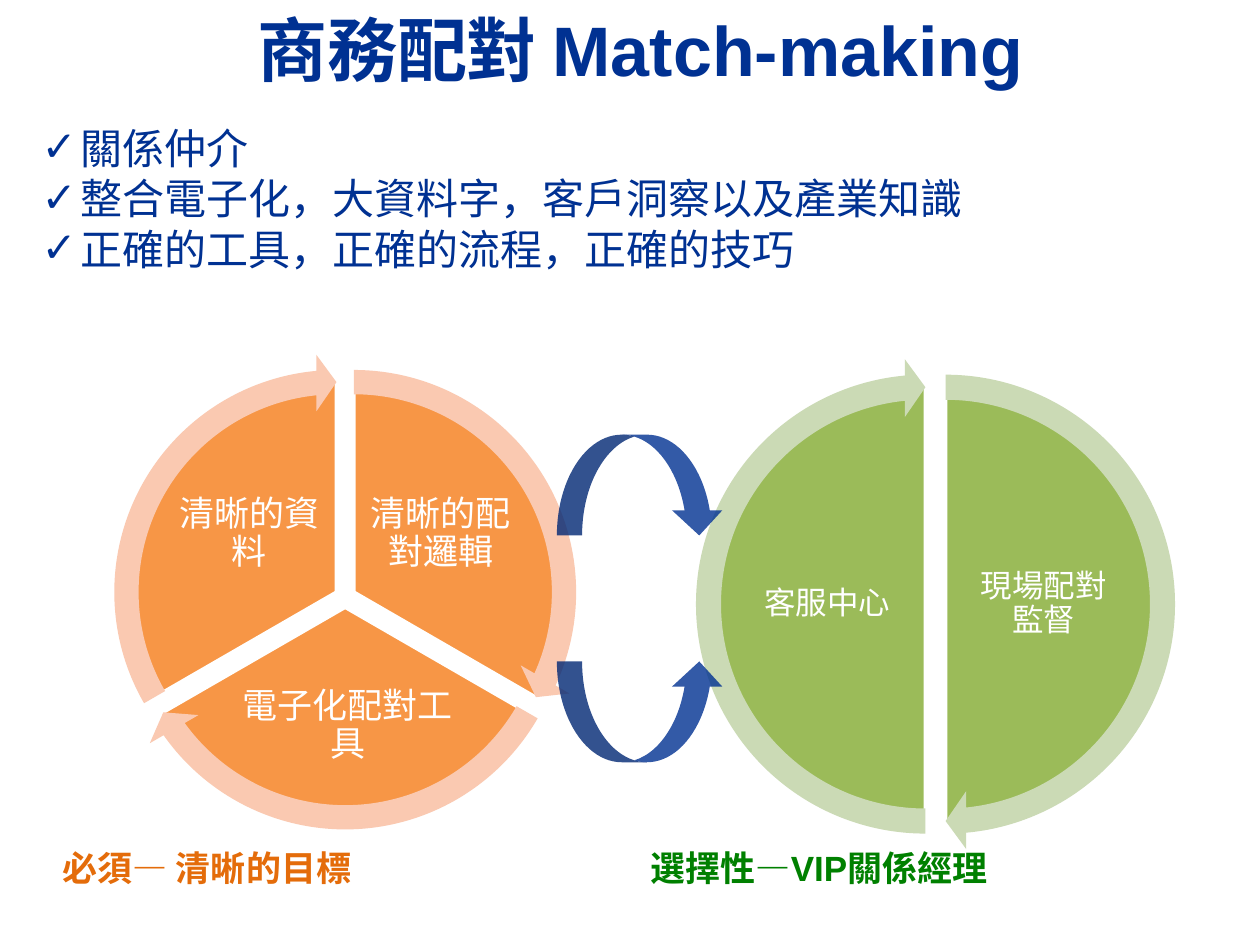
from math import cos, radians, sin

from lxml import etree
from pptx import Presentation
from pptx.dml.color import RGBColor
from pptx.enum.shapes import MSO_SHAPE
from pptx.enum.text import MSO_ANCHOR, PP_ALIGN
from pptx.oxml.ns import qn
from pptx.util import Inches, Pt

PIE, ARC = MSO_SHAPE.PIE, MSO_SHAPE.CIRCULAR_ARROW
CURVE_DOWN, CURVE_UP = MSO_SHAPE.CURVED_DOWN_ARROW, MSO_SHAPE.CURVED_UP_ARROW
TOP, MIDDLE = MSO_ANCHOR.TOP, MSO_ANCHOR.MIDDLE
LEFT, CENTER = PP_ALIGN.LEFT, PP_ALIGN.CENTER
NAVY = RGBColor(0x00, 0x31, 0x92)
WHITE = RGBColor(0xFF, 0xFF, 0xFF)
ORANGE = RGBColor(0xF7, 0x96, 0x46)
PEACH = RGBColor(0xFA, 0xC9, 0xB1)
RUST = RGBColor(0xE4, 0x6C, 0x0A)
LIME = RGBColor(0x9B, 0xBB, 0x59)
SAGE = RGBColor(0xCB, 0xDA, 0xB5)
GREEN = RGBColor(0x00, 0x80, 0x00)
GAP, RING, HEAD = 0.08, 1.125, 5.46


def place(sp, box):
    sp.left, sp.top, sp.width, sp.height = [Inches(v) for v in box]


def centred(cx, cy, w, h):
    return cx - w / 2, cy - h / 2, w, h


def write(tf, lines, size, color, bold=False, align=LEFT, anchor=TOP):
    tf.text = "\n".join(lines)
    tf.word_wrap = True
    tf.vertical_anchor = anchor
    for p in tf.paragraphs:
        p.alignment = align
        p.space_before = Pt(0)
        for r in p.runs:
            f = r.font
            f.name, f.size, f.bold = "Arial", Pt(size), bold
            f.color.rgb = color


def add_text(s, box, text, size, color, **style):
    sp = s.shapes.add_textbox(*[Inches(v) for v in box])
    write(sp.text_frame, [text], size, color, **style)
    return sp.text_frame


def add_solid(s, kind, box, color):
    sp = s.shapes.add_shape(kind, *[Inches(v) for v in box])
    sp.shadow.inherit = False
    sp.fill.solid()
    sp.fill.fore_color.rgb = color
    sp.line.fill.background()
    return sp


def adjust(sp, values):
    for i, value in enumerate(values):
        sp.adjustments[i] = value


def turn(degrees):
    return degrees % 360 * 0.6


def add_title(s, box, text):
    place(s.shapes.title, box)
    write(s.shapes.title.text_frame, [text], 40, NAVY, bold=True, align=CENTER)


def add_checklist(s, box, items):
    sp = s.placeholders[1]
    place(sp, box)
    write(sp.text_frame, items, 24, NAVY)
    for p in sp.text_frame.paragraphs:
        pPr = p._p.get_or_add_pPr()
        pPr.set("marL", str(Inches(0.31)))
        pPr.set("indent", str(-Inches(0.31)))
        etree.SubElement(pPr, qn("a:buChar")).set("char", "✓")


def add_wheel(s, box, fill, ring, size, labels):
    x, y, d = box
    cx, cy = x + d / 2, y + d / 2
    step = 360 / len(labels)
    sectors = []
    for i, label in enumerate(labels):
        start = 270 + i * step
        mid = radians(start + step / 2)
        sectors.append((cx + GAP * cos(mid), cy + GAP * sin(mid), start, start + step))
        px, py, _, end = sectors[-1]
        sp = add_solid(s, PIE, centred(px, py, d, d), fill)
        sp.line.color.rgb = WHITE
        sp.line.width = Pt(2)
        adjust(sp, (turn(start), turn(end)))
        text, dx, dy, w, h = label
        tf = add_text(s, centred(cx + dx, cy + dy, w, h), text, size, WHITE,
                      align=CENTER, anchor=MIDDLE)
        tf.margin_left = tf.margin_right = tf.margin_top = tf.margin_bottom = Inches(0.03)
        tf.paragraphs[0].line_spacing = 0.9
        tf.paragraphs[0].space_after = Pt(size * 0.35)
    for px, py, start, end in sectors:
        sp = add_solid(s, ARC, centred(px, py, d * RING, d * RING), ring)
        adjust(sp, (0.051, 3.275, turn(end - HEAD), turn(start), 0.059))


def add_links(s, box):
    x, y, w, h = box
    arrow_h = 0.8
    for kind, top in ((CURVE_DOWN, y), (CURVE_UP, y + h - arrow_h)):
        sp = add_solid(s, kind, (x, top, w, arrow_h), NAVY)
        clr = sp._element.spPr.find(qn("a:solidFill")).find(qn("a:srgbClr"))
        etree.SubElement(clr, qn("a:alpha")).set("val", "80000")


def add_captions(s, box, captions):
    x, y, w, h = box
    col = w / len(captions)
    for i, (text, color) in enumerate(captions):
        add_text(s, (x + i * col, y, col, h), text, 20, color, bold=True)


def main():
    prs = Presentation()
    prs.slide_width, prs.slide_height = Inches(10), Inches(7.5)
    s = prs.slides.add_slide(prs.slide_layouts[1])
    add_title(s, (0.58, 0, 9, 1.25), "商務配對 Match-making")
    add_checklist(s, (0.23, 0.92, 9.5, 1.31), [
        "關係仲介",
        "整合電子化，大資料字，客戶洞察以及產業知識",
        "正確的工具，正確的流程，正確的技巧",
    ])
    add_wheel(s, (1.06, 3.06, 3.36), ORANGE, PEACH, 20, [
        ("清晰的配對邏輯", 0.76, -0.5, 1.2, 1),
        ("電子化配對工具", 0.02, 1.02, 1.8, 0.88),
        ("清晰的資料", -0.76, -0.5, 1.2, 1),
    ])
    add_wheel(s, (5.69, 3.06, 3.47), LIME, SAGE, 18, [
        ("現場配對監督", 0.86, 0, 1.24, 1.65),
        ("客服中心", -0.86, 0, 1.24, 1.65),
    ])
    add_captions(s, (0.4, 6.67, 9.33, 0.44), [
        ("必須— 清晰的目標", RUST),
        ("選擇性—VIP關係經理", GREEN),
    ])
    add_links(s, (4.42, 3.45, 1.33, 2.6))
    prs.save("out.pptx")


if __name__ == "__main__":
    main()
